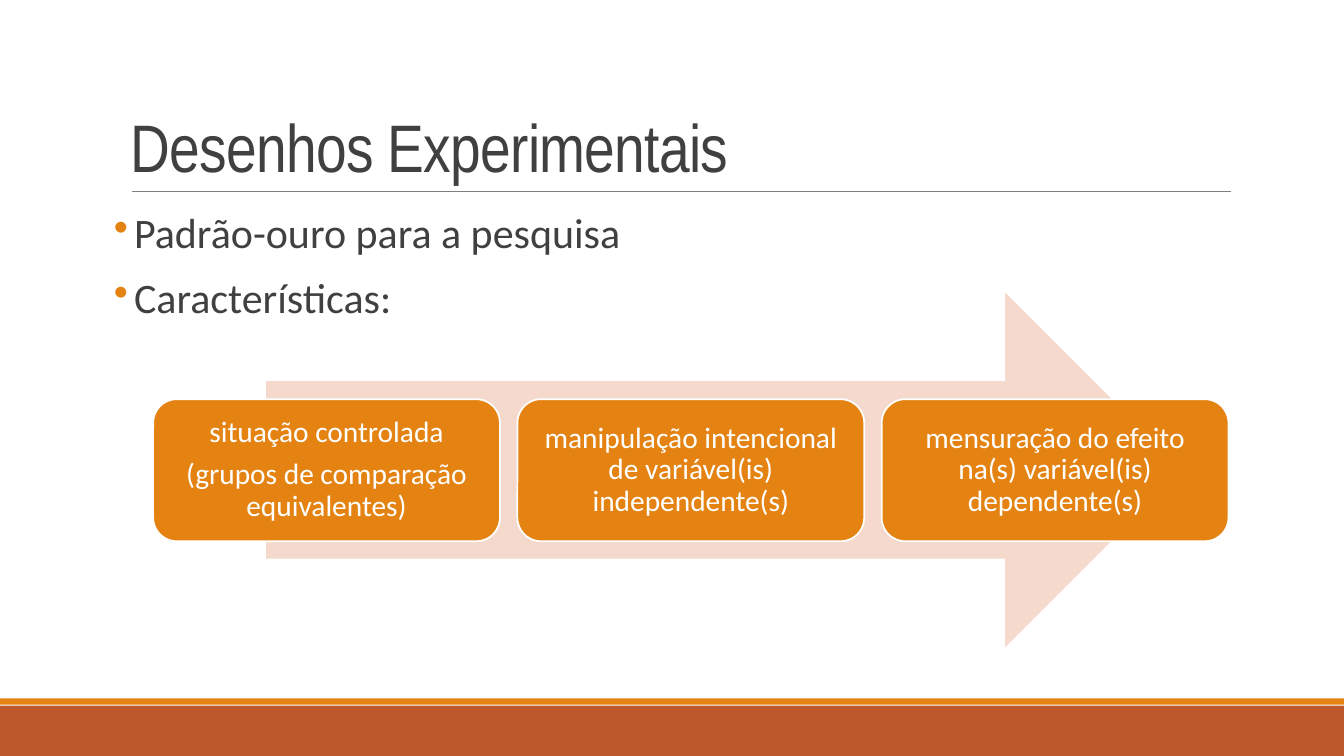
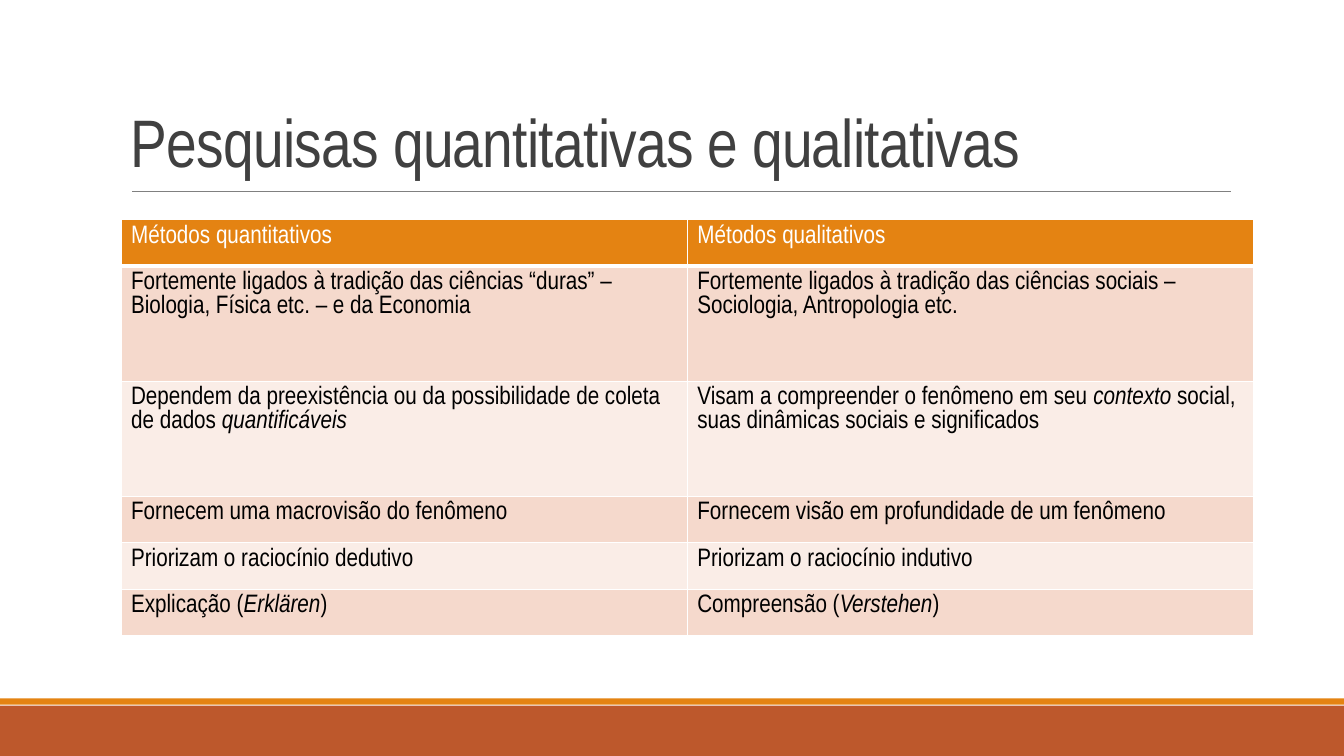
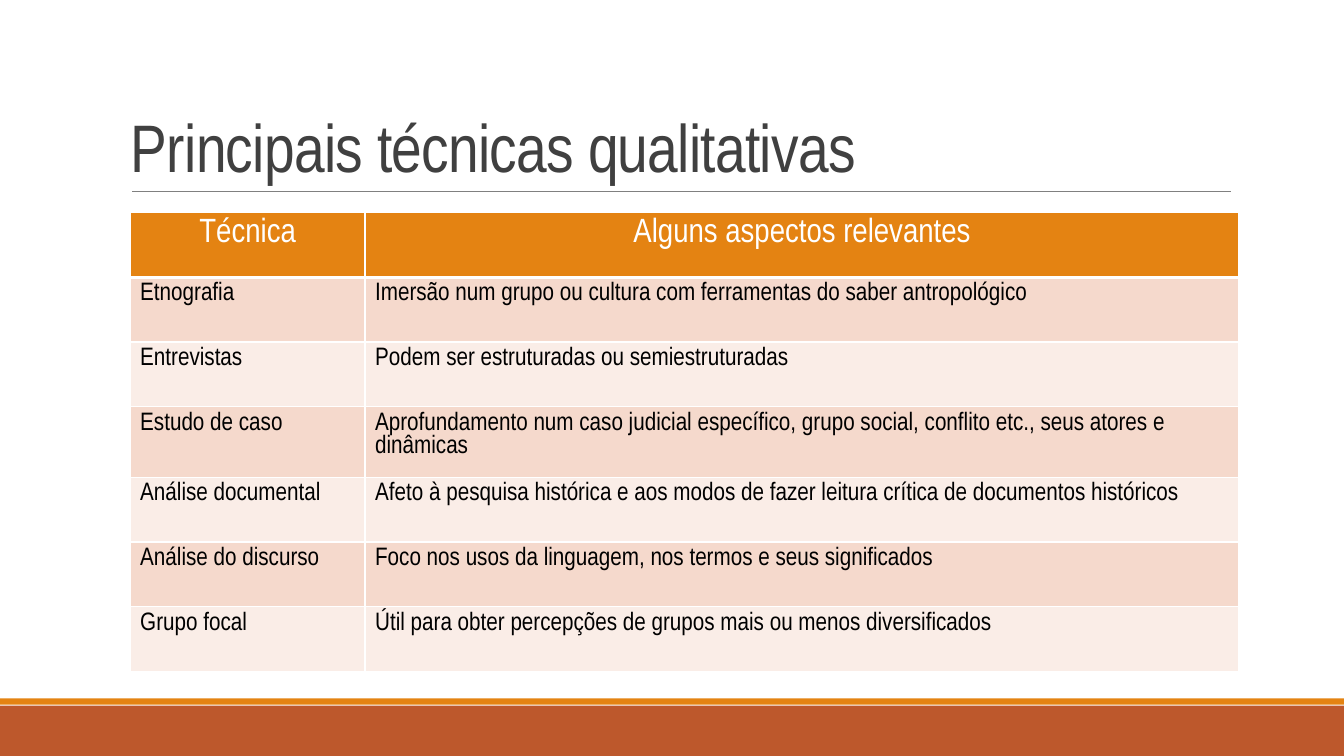
import pptx
import pptx.dml.color
import pptx.enum.shapes
import pptx.enum.text
import pptx.oxml
import pptx.oxml.ns
import pptx.util
from lxml import etree

Cm = pptx.util.Cm
Pt = pptx.util.Pt
RGB = pptx.dml.color.RGBColor.from_string
SHAPE = pptx.enum.shapes.MSO_SHAPE
ALIGN = pptx.enum.text.PP_ALIGN
ANCHOR = pptx.enum.text.MSO_ANCHOR
qn = pptx.oxml.ns.qn


class Theme:
    orange, rust, rule = RGB("E48312"), RGB("BD582C"), RGB("808080")
    peach, pale = RGB("F5D9CC"), RGB("FAEDE7")
    ink, black, white = RGB("404040"), RGB("000000"), RGB("FFFFFF")
    heading_font, body_font = "Arial Narrow", "Calibri"
    title_size, bullet_size, step_size = Pt(48), Pt(30), Pt(21)
    cell_size, large_head_size = Pt(18), Pt(24)


deck = pptx.Presentation()
deck.slide_width, deck.slide_height = Cm(33.87), Cm(19.05)


def start_slide(title, title_top=0.79):
    """Add a slide with the footer bands, the title and its rule."""
    slide = deck.slides.add_slide(deck.slide_layouts[6])
    for top, height, color in ((17.78, 1.27, Theme.rust), (17.6, 0.16, Theme.orange)):
        band = slide.shapes.add_shape(SHAPE.RECTANGLE, 0, Cm(top), deck.slide_width, Cm(height))
        band.shadow.inherit = False
        band.fill.solid()
        band.fill.fore_color.rgb = color
        band.line.fill.background()

    rule = slide.shapes.add_connector(
        pptx.enum.shapes.MSO_CONNECTOR.STRAIGHT, Cm(3.33), Cm(4.83), Cm(31.01), Cm(4.83))
    rule.line.color.rgb = Theme.rule
    rule.line.width = Pt(0.5)
    etree.SubElement(rule._element.spPr, qn("a:effectLst"))

    heading = slide.shapes.add_textbox(Cm(3.05), Cm(title_top), Cm(27.94), Cm(4.04)).text_frame
    heading.word_wrap = True
    heading.vertical_anchor = ANCHOR.BOTTOM
    heading.text = title
    line = heading.paragraphs[0]
    line.line_spacing = 0.85
    run = line.runs[0]
    run.font.name, run.font.size = Theme.heading_font, Theme.title_size
    run.font.color.rgb = Theme.ink
    run._r.get_or_add_rPr().set("spc", "-50")
    return slide


def add_grid(slide, left, top, widths, heights, rows, head_size, head_align):
    """Add a banded table; words between asterisks are italic."""
    grid = slide.shapes.add_table(
        len(rows), len(widths), Cm(left), Cm(top), Cm(sum(widths)), Cm(sum(heights))).table
    for column, width in zip(grid.columns, widths):
        column.width = Cm(width)
    for r, (height, texts) in enumerate(zip(heights, rows)):
        grid.rows[r].height = Cm(height)
        is_head = r == 0
        fill = Theme.orange if is_head else (Theme.pale, Theme.peach)[r % 2]
        for c, text in enumerate(texts):
            cell = grid.cell(r, c)
            line = cell.text_frame.paragraphs[0]
            line.alignment = head_align if is_head else ALIGN.LEFT
            for i, part in enumerate(text.split("*")):
                run = line.add_run()
                run.text = part
                run.font.name = Theme.heading_font
                run.font.size = head_size if is_head else Theme.cell_size
                run.font.color.rgb = Theme.white if is_head else Theme.black
                run.font.bold = False
                run.font.italic = i % 2 == 1
            # Borders come before the fill in the cell properties
            properties = cell._tc.get_or_add_tcPr()
            for side in ("L", "R", "T", "B"):
                points = 3 if is_head and side == "B" else 1
                border = etree.SubElement(properties, qn(f"a:ln{side}"), w=str(Pt(points)))
                paint = etree.SubElement(border, qn("a:solidFill"))
                etree.SubElement(paint, qn("a:srgbClr"), val=str(Theme.white))
            cell.fill.solid()
            cell.fill.fore_color.rgb = fill


# Slide 1: experimental designs
slide = start_slide("Desenhos Experimentais")

# Arrow behind the three characteristics
arrow = slide.shapes.add_shape(SHAPE.RIGHT_ARROW, Cm(6.71), Cm(7.37), Cm(23.09), Cm(8.94))
arrow.shadow.inherit = False
arrow.fill.solid()
arrow.fill.fore_color.rgb = Theme.peach
arrow.line.fill.background()

characteristics = [
    "situação controlada\n(grupos de comparação equivalentes)",
    "manipulação intencional de variável(is) independente(s)",
    "mensuração do efeito na(s) variável(is) dependente(s)",
]
step_width, step_gap = 8.74, 0.44
for i, text in enumerate(characteristics):
    step = slide.shapes.add_shape(
        SHAPE.ROUNDED_RECTANGLE, Cm(3.86 + i * (step_width + step_gap)), Cm(10.06),
        Cm(step_width), Cm(3.58))
    step.shadow.inherit = False
    step.fill.solid()
    step.fill.fore_color.rgb = Theme.orange
    step.line.color.rgb = Theme.white
    step.line.width = Pt(1.25)
    frame = step.text_frame
    frame.word_wrap = True
    frame.vertical_anchor = ANCHOR.MIDDLE
    frame.margin_left = frame.margin_right = Cm(0.4)
    frame.margin_top = frame.margin_bottom = Cm(0.4)
    frame.text = text
    for line in frame.paragraphs:
        line.alignment = ALIGN.CENTER
        line.line_spacing = 0.9
        line.space_after = Pt(7.35)
        line.font.name, line.font.size = Theme.body_font, Theme.step_size
        line.font.color.rgb = Theme.white

# Bulleted points
points = slide.shapes.add_textbox(Cm(2.87), Cm(5.23), Cm(18.03), Cm(3.5)).text_frame
points.word_wrap = True
points.margin_left = points.margin_right = 0
points.text = "Padrão-ouro para a pesquisa\nCaracterísticas:"
for i, line in enumerate(points.paragraphs):
    line.line_spacing = 0.9
    line.space_before = Pt(12 if i else 0)
    line.space_after = Pt(2)
    properties = line._p.get_or_add_pPr()
    properties.set("marL", str(Cm(0.51)))
    properties.set("indent", str(Cm(-0.51)))
    bullet_color = etree.SubElement(properties, qn("a:buClr"))
    etree.SubElement(bullet_color, qn("a:srgbClr"), val=str(Theme.orange))
    etree.SubElement(properties, qn("a:buChar"), char="•")
    line.font.name, line.font.size = Theme.body_font, Theme.bullet_size
    line.font.color.rgb = Theme.ink

# Slide 2: quantitative and qualitative research
slide = start_slide("Pesquisas quantitativas e qualitativas", title_top=0.64)
methods = [
    ("Métodos quantitativos", "Métodos qualitativos"),
    ("Fortemente ligados à tradição das ciências “duras” – Biologia, Física etc. – e da Economia",
     "Fortemente ligados à tradição das ciências sociais – Sociologia, Antropologia etc."),
    ("Dependem da preexistência ou da possibilidade de coleta de dados *quantificáveis*",
     "Visam a compreender o fenômeno em seu *contexto* social, "
     "suas dinâmicas sociais e significados"),
    ("Fornecem uma macrovisão do fenômeno", "Fornecem visão em profundidade de um fenômeno"),
    ("Priorizam o raciocínio dedutivo", "Priorizam o raciocínio indutivo"),
    ("Explicação (*Erklären*)", "Compreensão (*Verstehen*)"),
]
short, tall = 1.17, 2.9
add_grid(slide, 3.05, 5.54, [14.27] * 2, [short, tall, tall, short, short, short],
         methods, Theme.cell_size, ALIGN.LEFT)

# Slide 3: main qualitative techniques
slide = start_slide("Principais técnicas qualitativas")
techniques = [
    ("Técnica", "Alguns aspectos relevantes"),
    ("Etnografia", "Imersão num grupo ou cultura com ferramentas do saber antropológico"),
    ("Entrevistas", "Podem ser estruturadas ou semiestruturadas"),
    ("Estudo de caso",
     "Aprofundamento num caso judicial específico, grupo social, conflito etc., "
     "seus atores e dinâmicas"),
    ("Análise documental",
     "Afeto à pesquisa histórica e aos modos de fazer leitura crítica de documentos históricos"),
    ("Análise do discurso", "Foco nos usos da linguagem, nos termos e seus significados"),
    ("Grupo focal", "Útil para obter percepções de grupos mais ou menos diversificados"),
]
add_grid(slide, 3.28, 5.36, [5.92, 22.02], [1.63] * len(techniques),
         techniques, Theme.large_head_size, ALIGN.CENTER)

deck.save("out.pptx")
